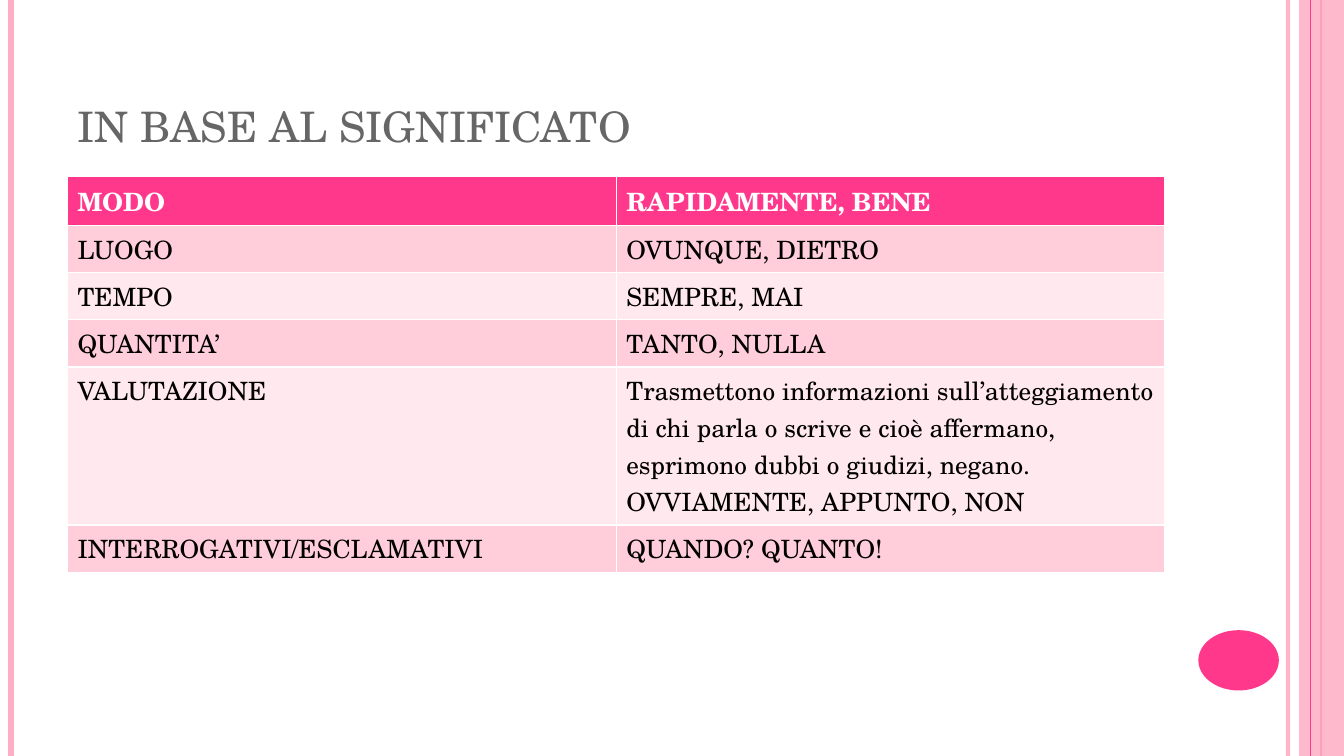
from dataclasses import dataclass

from lxml import etree
from pptx import Presentation
from pptx.dml.color import RGBColor
from pptx.enum.shapes import MSO_CONNECTOR, MSO_SHAPE
from pptx.enum.text import MSO_ANCHOR, PP_ALIGN
from pptx.oxml.ns import qn
from pptx.util import Cm, Pt

STRAIGHT = MSO_CONNECTOR.STRAIGHT
RECTANGLE, OVAL = MSO_SHAPE.RECTANGLE, MSO_SHAPE.OVAL
BOTTOM, LEFT = MSO_ANCHOR.BOTTOM, PP_ALIGN.LEFT


@dataclass(frozen=True)
class Theme:
    font: str = "TeX Gyre Schola"
    title_size: Pt = Pt(30)
    table_size: Pt = Pt(18)
    grey: RGBColor = RGBColor(0x66, 0x66, 0x66)
    black: RGBColor = RGBColor(0, 0, 0)
    white: RGBColor = RGBColor(0xFF, 0xFF, 0xFF)
    pink: RGBColor = RGBColor(0xFF, 0x38, 0x8C)
    light_pink: RGBColor = RGBColor(0xFF, 0xAF, 0xC5)
    bands: tuple = (RGBColor(0xFF, 0xE8, 0xEE), RGBColor(0xFF, 0xCE, 0xDA))


theme = Theme()


def set_opacity(shape, percent):
    color = next(shape._element.spPr.iter(qn("a:srgbClr")))
    etree.SubElement(color, qn("a:alpha")).set("val", str(percent * 1000))


def style_paragraph(para, size, color, bold=False):
    para.alignment = LEFT
    para.font.name = theme.font
    para.font.size = size
    para.font.bold = bold
    para.font.color.rgb = color


deck = Presentation()
deck.slide_width, deck.slide_height = Cm(33.87), Cm(19.05)
page = deck.slides.add_slide(deck.slide_layouts[5])

# Vertical stripes: x in cm, colour, width in points, opacity
stripes = [
    (32.46, theme.light_pink, 3, 93),
    (0.28, theme.light_pink, 4.5, 100),
    (33.3, theme.pink, 1.5, 100),
    (33.02, theme.pink, 0.75, 100),
]
for x, color, width, opacity in stripes:
    stripe = page.shapes.add_connector(STRAIGHT, Cm(x), 0, Cm(x), deck.slide_height)
    stripe.line.color.rgb = color
    stripe.line.width = Pt(width)
    etree.SubElement(stripe._element.spPr, qn("a:effectLst"))
    if opacity < 100:
        set_opacity(stripe, opacity)
last_stripe = stripe

# Right-hand band and oval
band = page.shapes.add_shape(RECTANGLE, Cm(32.74), 0, Cm(1.13), deck.slide_height)
oval = page.shapes.add_shape(OVAL, Cm(30.2), Cm(15.88), Cm(2.03), Cm(1.52))
for shape, color in ((band, theme.light_pink), (oval, theme.pink)):
    shape.shadow.inherit = False
    shape.fill.solid()
    shape.fill.fore_color.rgb = color
    shape.line.fill.background()
set_opacity(band, 87)
band._element.addnext(last_stripe._element)

# Title
title = page.shapes.title
title.left, title.top, title.width, title.height = Cm(1.7), Cm(0.76), Cm(27.66), Cm(3.18)
title.text_frame.text = "IN BASE AL SIGNIFICATO"
title.text_frame.vertical_anchor = BOTTOM
style_paragraph(title.text_frame.paragraphs[0], theme.title_size, theme.grey)

# Table of adverbs by meaning
adverbs = [
    ("MODO", "RAPIDAMENTE, BENE"),
    ("LUOGO", "OVUNQUE, DIETRO"),
    ("TEMPO", "SEMPRE, MAI"),
    ("QUANTITA’", "TANTO, NULLA"),
    ("VALUTAZIONE",
     "Trasmettono informazioni sull’atteggiamento di chi parla o scrive e cioè "
     "affermano, esprimono dubbi o giudizi, negano.\nOVVIAMENTE, APPUNTO, NON"),
    ("INTERROGATIVI/ESCLAMATIVI", "QUANDO? QUANTO!"),
]
table = page.shapes.add_table(
    len(adverbs), 2, Cm(1.7), Cm(4.45), Cm(27.66), Cm(1.03 * len(adverbs))
).table
for row, texts in enumerate(adverbs):
    header = row == 0
    for column, text in enumerate(texts):
        cell = table.cell(row, column)
        cell.fill.solid()
        cell.fill.fore_color.rgb = theme.pink if header else theme.bands[row % 2]
        cell.text = text
        for para in cell.text_frame.paragraphs:
            style_paragraph(para, theme.table_size,
                            theme.white if header else theme.black, header)

deck.save("out.pptx")
